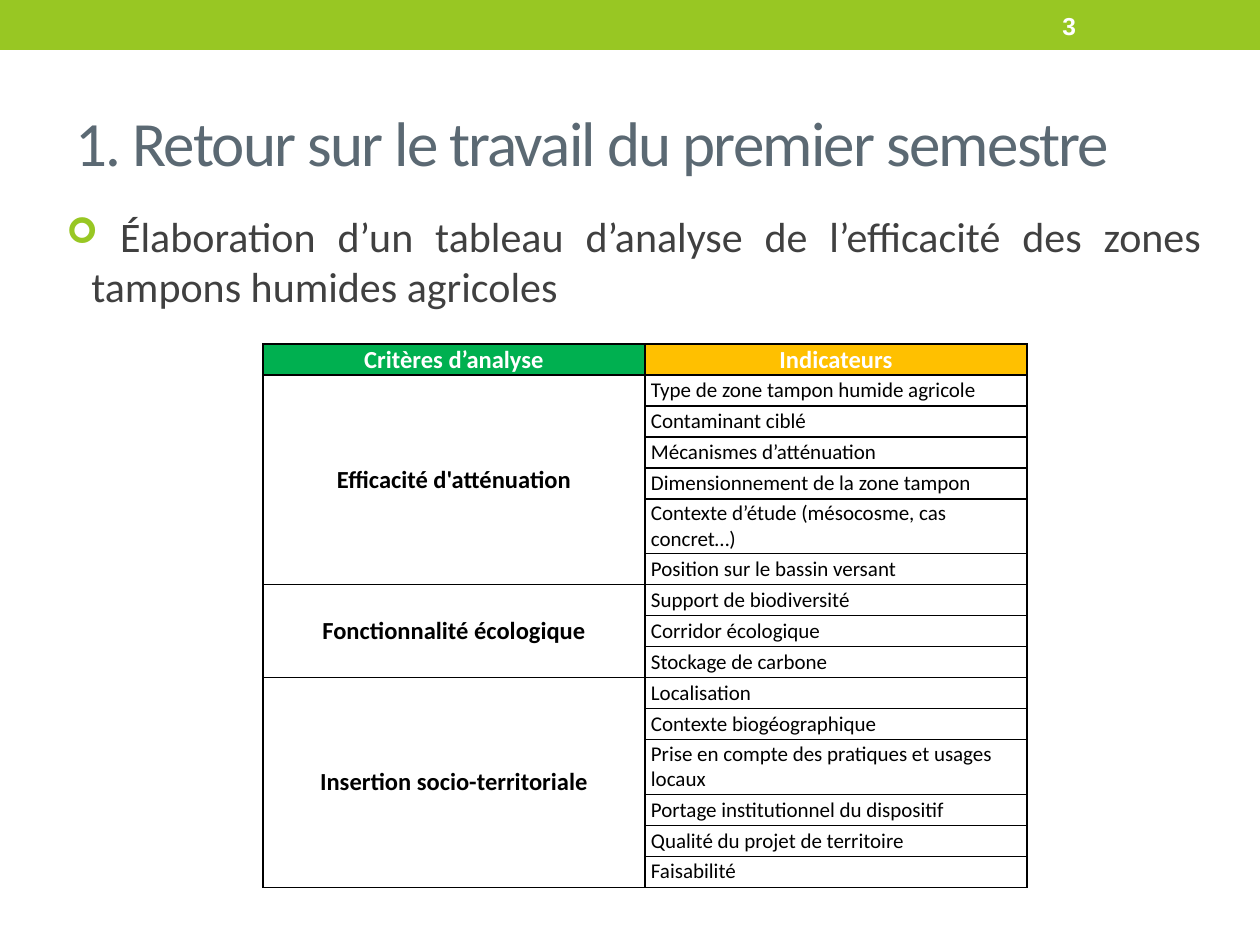
import pptx
import pptx.dml.color
import pptx.enum.shapes
import pptx.enum.text
import pptx.oxml
import pptx.oxml.ns
import pptx.util

ALIGN = pptx.enum.text.PP_ALIGN
ANCHOR = pptx.enum.text.MSO_ANCHOR
COLORS = {
    "band": "98C723", "title": "5B6973", "body": "404040", "white": "FFFFFF",
    "black": "000000", "criteria": "00B050", "indicators": "FFC000",
}
HEADERS = [("Critères d’analyse", "criteria"), ("Indicateurs", "indicators")]
CRITERIA = {
    "Efficacité d'atténuation": [
        "Type de zone tampon humide agricole",
        "Contaminant ciblé",
        "Mécanismes d’atténuation",
        "Dimensionnement de la zone tampon",
        "Contexte d’étude (mésocosme, cas concret…)",
        "Position sur le bassin versant",
    ],
    "Fonctionnalité écologique": [
        "Support de biodiversité",
        "Corridor écologique",
        "Stockage de carbone",
    ],
    "Insertion socio-territoriale": [
        "Localisation",
        "Contexte biogéographique",
        "Prise en compte des pratiques et usages locaux",
        "Portage institutionnel du dispositif",
        "Qualité du projet de territoire",
        "Faisabilité",
    ],
}
ROW_HEIGHT, TALL_ROW_HEIGHT, LINE_LENGTH = 31, 55, 40


def px(length):
    """Turn pixels into EMU."""
    return pptx.util.Emu(round(length * 914400 / 126))


def rgb(name):
    """Return a named colour."""
    return pptx.dml.color.RGBColor.from_string(COLORS[name])


def apply_format(target, values):
    """Set attributes from a dict of format values."""
    for name, value in values.items():
        setattr(target, name, value)


def write_text(frame, text, size, color, bold=False, font="Calibri", **layout):
    """Write one formatted paragraph and return it."""
    paragraph = frame.paragraphs[0]
    apply_format(paragraph, layout)
    run = paragraph.add_run()
    run.text = text
    apply_format(run.font, {"name": font, "size": pptx.util.Pt(size), "bold": bold})
    run.font.color.rgb = rgb(color)
    return paragraph


def add_band(slide):
    """Draw the band across the top."""
    shape = slide.shapes.add_shape(
        pptx.enum.shapes.MSO_SHAPE.RECTANGLE, 0, 0, px(1260), px(50))
    shape.shadow.inherit = False
    shape.fill.solid()
    shape.fill.fore_color.rgb = rgb("band")
    shape.line.fill.background()


def add_text_box(slide, box, anchor, *text, **layout):
    """Add a wrapped text box and return its paragraph."""
    frame = slide.shapes.add_textbox(*map(px, box)).text_frame
    apply_format(frame, {"word_wrap": True, "vertical_anchor": anchor})
    return write_text(frame, *text, **layout)


def add_title(slide, box, text):
    """Place and format the title placeholder."""
    title = slide.shapes.title
    apply_format(title, dict(zip(("left", "top", "width", "height"), map(px, box))))
    apply_format(title.text_frame, {
        "word_wrap": True, "vertical_anchor": ANCHOR.MIDDLE,
        "auto_size": pptx.enum.text.MSO_AUTO_SIZE.NONE})
    paragraph = write_text(title.text_frame, text, 36, "title", alignment=ALIGN.JUSTIFY)
    paragraph.runs[0].font._element.set("spc", "-100")


def add_bullet(paragraph, character, indent):
    """Give a paragraph a hanging coloured bullet."""
    properties = paragraph._p.get_or_add_pPr()
    properties.set("marL", str(px(indent)))
    properties.set("indent", str(-px(indent)))
    namespace = pptx.oxml.ns.nsdecls("a")
    for markup in (
        f'<a:buClr {namespace}><a:srgbClr val="{COLORS["band"]}"/></a:buClr>',
        f'<a:buSzPct {namespace} val="85000"/>',
        f'<a:buFont {namespace} typeface="Wingdings"/>',
        f'<a:buChar {namespace} char="{character}"/>',
    ):
        properties.append(pptx.oxml.parse_xml(markup))


def add_borders(cell):
    """Draw thin black lines on the four sides of a cell."""
    properties = cell._tc.get_or_add_tcPr()
    for side in ("lnL", "lnR", "lnT", "lnB"):
        properties.append(pptx.oxml.parse_xml(
            f'<a:{side} {pptx.oxml.ns.nsdecls("a")} w="12700"><a:solidFill>'
            f'<a:srgbClr val="{COLORS["black"]}"/></a:solidFill></a:{side}>'))


def format_cell(cell):
    """Set the margins, borders and empty fill of a cell."""
    apply_format(cell, {
        "margin_left": px(6), "margin_right": px(6), "margin_top": 0,
        "margin_bottom": 0, "vertical_anchor": ANCHOR.MIDDLE})
    add_borders(cell)
    cell.fill.background()


def write_cell(cell, text, size, color="black", bold=False, alignment=ALIGN.LEFT):
    """Write the text of a table cell."""
    write_text(cell.text_frame, text, size, color, bold,
               alignment=alignment, space_before=pptx.util.Pt(6))


def add_criteria_table(slide, left, top, column_width):
    """Build the table of criteria and their indicators."""
    indicators = [text for group in CRITERIA.values() for text in group]
    heights = [ROW_HEIGHT] + [
        TALL_ROW_HEIGHT if len(text) > LINE_LENGTH else ROW_HEIGHT for text in indicators]
    table = slide.shapes.add_table(
        len(heights), 2, px(left), px(top), px(2 * column_width), px(sum(heights))).table
    apply_format(table, {"first_row": False, "horz_banding": False})
    for column in table.columns:
        column.width = px(column_width)
    for row, height in zip(table.rows, heights):
        row.height = px(height)
    for cell in table.iter_cells():
        format_cell(cell)
    for index, (text, color) in enumerate(HEADERS):
        cell = table.cell(0, index)
        cell.vertical_anchor = ANCHOR.BOTTOM
        cell.fill.solid()
        cell.fill.fore_color.rgb = rgb(color)
        write_cell(cell, text, 14, "white", True, ALIGN.CENTER)
    for index, text in enumerate(indicators, 1):
        write_cell(table.cell(index, 1), text, 12)
    first = 1
    for criterion, group in CRITERIA.items():
        cell = table.cell(first, 0)
        cell.merge(table.cell(first + len(group) - 1, 0))
        write_cell(cell, criterion, 14, bold=True, alignment=ALIGN.CENTER)
        first += len(group)


def main():
    """Build and save the presentation."""
    presentation = pptx.Presentation()
    apply_format(presentation, {"slide_width": px(1260), "slide_height": px(945)})
    slide = presentation.slides.add_slide(presentation.slide_layouts[5])
    add_band(slide)
    add_text_box(slide, (1050, 3, 147, 45), ANCHOR.MIDDLE, "3", 14, "white", True, "Arial")
    add_title(slide, (63, 73, 1134, 136), "1. Retour sur le travail du premier semestre")
    paragraph = add_text_box(
        slide, (54, 204, 1160, 352), ANCHOR.TOP,
        " Élaboration d’un tableau d’analyse de l’efficacité des zones tampons humides agricoles",
        24, "body", alignment=ALIGN.JUSTIFY, space_before=pptx.util.Pt(4.8))
    add_bullet(paragraph, "➢", 25)
    add_criteria_table(slide, 263, 344, 382)
    presentation.save("out.pptx")


if __name__ == "__main__":
    main()
